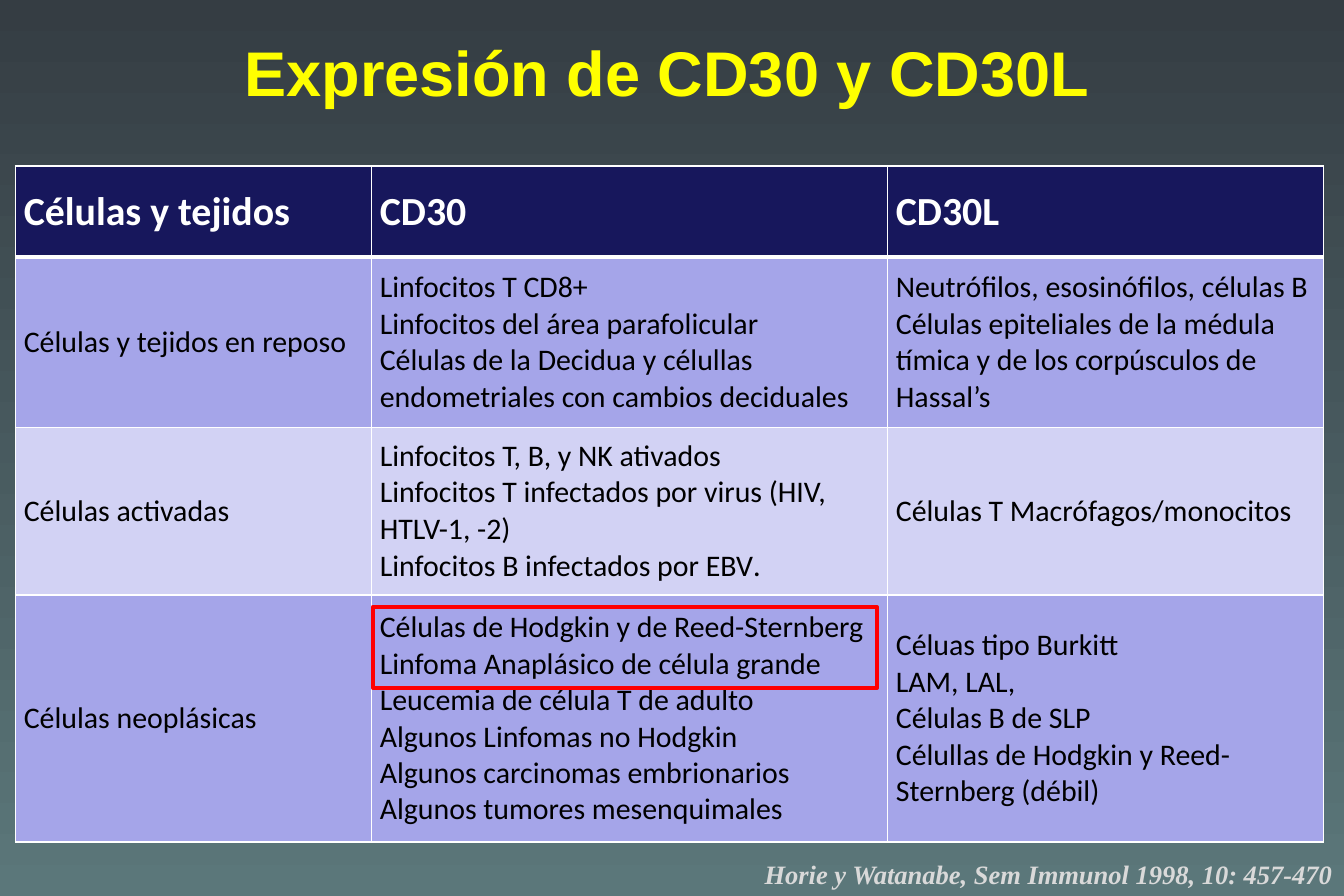
import pptx
import pptx.dml.color
import pptx.enum.shapes
import pptx.enum.text
import pptx.oxml
import pptx.oxml.ns
import pptx.util
from lxml import etree

WIDTH, HEIGHT = 11.25, 7.5
ALIGN = pptx.enum.text.PP_ALIGN
MIDDLE = pptx.enum.text.MSO_ANCHOR.MIDDLE

COLUMNS = [2.98, 4.32, 3.65]
ROWS = [0.76, 1.43, 1.4, 2.07]
ROW_FILLS = ["17175C", "A5A5E9", "D2D2F4", "A5A5E9"]
EXPRESSION = [
    ["Células y tejidos", "CD30", "CD30L"],
    ["Células y tejidos en reposo",
     "Linfocitos T CD8+\nLinfocitos del área parafolicular\n"
     "Células de la Decidua y célullas endometriales con cambios deciduales",
     "Neutrófilos, esosinófilos, células B\n"
     "Células epiteliales de la médula tímica y de los corpúsculos de Hassal’s"],
    ["Células activadas",
     "Linfocitos T, B, y NK ativados\n"
     "Linfocitos T infectados por virus (HIV, HTLV-1, -2)\n"
     "Linfocitos B infectados por EBV.",
     "Células T Macrófagos/monocitos"],
    ["Células neoplásicas",
     "Células de Hodgkin y de Reed-Sternberg\nLinfoma Anaplásico de célula grande\n"
     "Leucemia de célula T de adulto\nAlgunos Linfomas no Hodgkin\n"
     "Algunos carcinomas embrionarios\nAlgunos tumores mesenquimales",
     "Céluas tipo Burkitt\nLAM, LAL,\nCélulas B de SLP\n"
     "Célullas de Hodgkin y Reed-Sternberg (débil)"],
]
HEADER_FONT = dict(name="Calibri", size=24, color="FFFFFF", bold=True)
BODY_FONT = dict(name="Calibri", size=18, color="000000", bold=False)


def rgb(value):
    return pptx.dml.color.RGBColor.from_string(value)


def inches(*values):
    return [pptx.util.Inches(value) for value in values]


def style_font(font, formats):
    for key, value in formats.items():
        if key == "color":
            font.color.rgb = rgb(value)
        else:
            setattr(font, key, pptx.util.Pt(value) if key == "size" else value)


def paint_background(slide, top, bottom):
    fill = slide.background.fill
    fill.gradient()
    fill.gradient_angle = 270
    for stop, color, position in zip(fill.gradient_stops, (top, bottom), (0, 1)):
        stop.color.rgb = rgb(color)
        stop.position = position


def add_title(slide, box, text):
    title = slide.shapes.title
    for side, value in zip(("left", "top", "width", "height"), inches(*box)):
        setattr(title, side, value)
    title.text_frame.vertical_anchor = MIDDLE
    heading = title.text_frame.paragraphs[0]
    heading.alignment = ALIGN.CENTER
    run = heading.add_run()
    run.text = text
    style_font(run.font, dict(name="Arial", size=38, color="FFFF00", bold=True))


def set_borders(cell, widths):
    """Draw white borders; widths gives points for each side, in schema order."""
    properties = cell._tc.get_or_add_tcPr()
    for side, width in widths.items():
        border = etree.SubElement(properties, pptx.oxml.ns.qn(f"a:ln{side}"),
                                  w=str(pptx.util.Pt(width)))
        solid = etree.SubElement(border, pptx.oxml.ns.qn("a:solidFill"))
        etree.SubElement(solid, pptx.oxml.ns.qn("a:srgbClr"), val="FFFFFF")


def fill_cell(cell, text, row):
    set_borders(cell, dict(L=1, R=1, T=3 if row == 1 else 1, B=3 if row == 0 else 1))
    cell.fill.solid()
    cell.fill.fore_color.rgb = rgb(ROW_FILLS[row])
    cell.vertical_anchor = MIDDLE
    for side, margin in dict(left=0.07, right=0.07, top=0, bottom=0).items():
        setattr(cell, f"margin_{side}", pptx.util.Inches(margin))
    formats = BODY_FONT if row else HEADER_FONT
    cell.text = text
    for paragraph in cell.text_frame.paragraphs:
        run = paragraph.runs[0]
        style_font(run.font, formats)
        if run.text.endswith("."):
            run.text = run.text[:-1]
            full_stop = paragraph.add_run()
            full_stop.text = "."
            style_font(full_stop.font, {**formats, "name": "Lato"})


def add_expression_table(slide, left, top):
    table = slide.shapes.add_table(
        len(ROWS), len(COLUMNS), *inches(left, top, sum(COLUMNS), sum(ROWS))).table
    for column, width in zip(table.columns, COLUMNS):
        column.width = pptx.util.Inches(width)
    for index, height in enumerate(ROWS):
        table.rows[index].height = pptx.util.Inches(height)
        for column, text in enumerate(EXPRESSION[index]):
            fill_cell(table.cell(index, column), text, index)


def add_citation(slide, box, text):
    frame = slide.shapes.add_textbox(*inches(*box)).text_frame
    frame.word_wrap = True
    frame.auto_size = pptx.enum.text.MSO_AUTO_SIZE.SHAPE_TO_FIT_TEXT
    citation = frame.paragraphs[0]
    citation.alignment = ALIGN.RIGHT
    run = citation.add_run()
    run.text = text
    style_font(run.font, dict(name="Times New Roman", size=16, color="D9D9D9",
                              bold=True, italic=True))


def add_highlight(slide, box):
    highlight = slide.shapes.add_shape(
        pptx.enum.shapes.MSO_SHAPE.RECTANGLE, *inches(*box))
    highlight.shadow.inherit = False
    highlight.fill.background()
    highlight.line.color.rgb = rgb("FF0000")
    highlight.line.width = pptx.util.Pt(2.25)


def main():
    deck = pptx.Presentation()
    deck.slide_width, deck.slide_height = inches(WIDTH, HEIGHT)
    slide = deck.slides.add_slide(deck.slide_layouts[5])
    paint_background(slide, "353D43", "5B777A")
    add_title(slide, (0.31, 0.16, 10.55, 0.88), "Expresión de CD30 y CD30L")
    table_left, table_top = 0.13, 1.39
    add_expression_table(slide, table_left, table_top)
    add_citation(slide, (WIDTH / 2, HEIGHT - 0.37, WIDTH / 2, 0.37),
                 "Horie y Watanabe, Sem Immunol 1998, 10: 457-470")
    add_highlight(slide, (table_left + COLUMNS[0] + 0.01,
                          table_top + sum(ROWS[:3]) + 0.1, 4.22, 0.68))
    deck.save("out.pptx")


if __name__ == "__main__":
    main()
